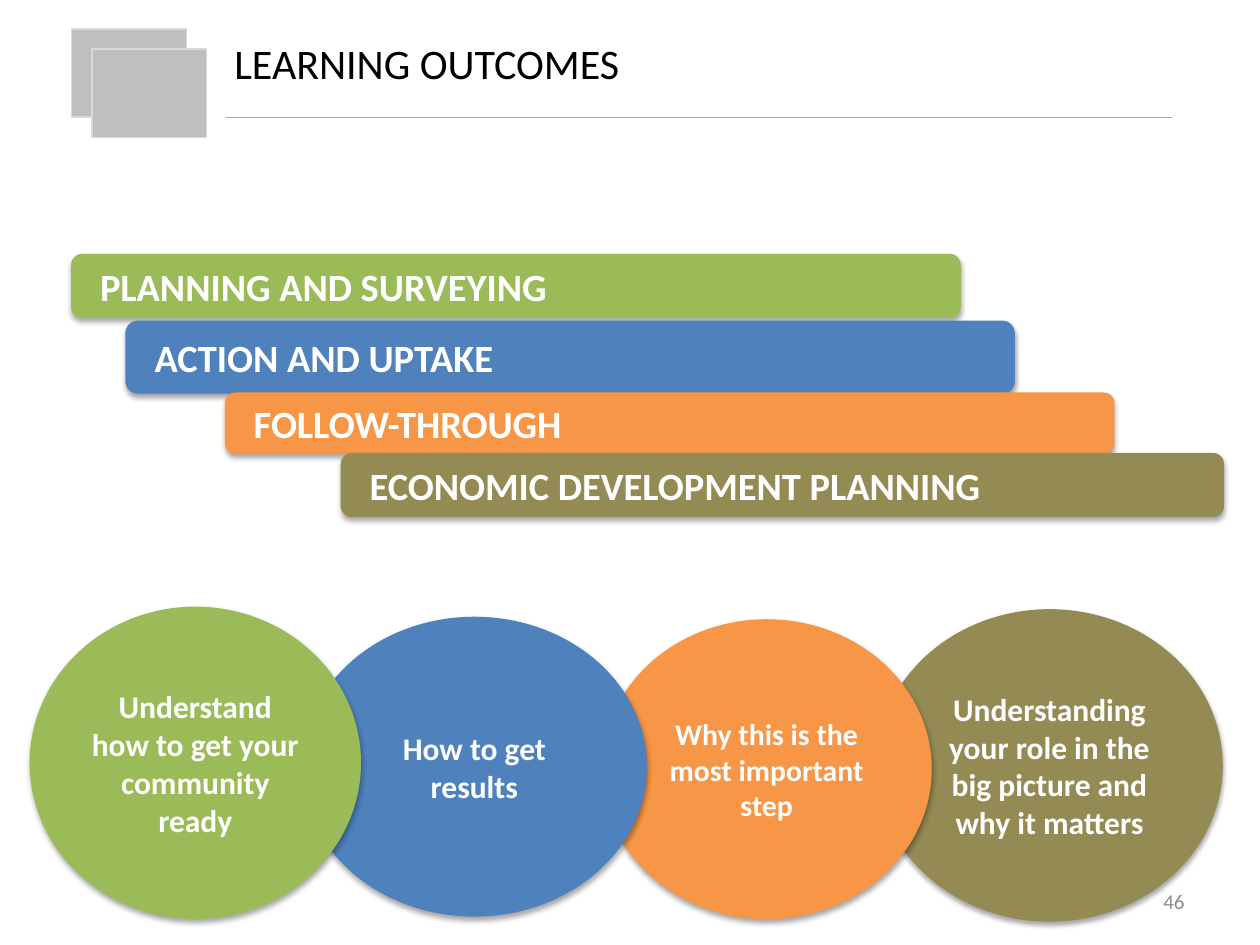
import dataclasses
import typing

import lxml.etree
import pptx
import pptx.dml.color
import pptx.enum.shapes
import pptx.enum.text
import pptx.oxml.ns
import pptx.util

Inches = pptx.util.Inches
Pt = pptx.util.Pt
Align = pptx.enum.text.PP_ALIGN
Kind = pptx.enum.shapes.MSO_SHAPE
qn = pptx.oxml.ns.qn

GREEN, BLUE, ORANGE, OLIVE = "9BBB59", "4F81BD", "F79646", "948A54"


@dataclasses.dataclass
class Item:
    text: str
    left: float
    top: float
    width: float
    height: float
    fill: str
    size: int


BARS = [
    Item("PLANNING AND SURVEYING", 0.57, 2.02, 7.05, 0.5, GREEN, 22),
    Item("ACTION AND UPTAKE", 1, 2.55, 7.05, 0.57, BLUE, 22),
    Item("FOLLOW-THROUGH", 1.79, 3.12, 7.05, 0.48, ORANGE, 22),
    Item("ECONOMIC DEVELOPMENT PLANNING", 2.71, 3.6, 7, 0.5, OLIVE, 22),
]
OVALS = [
    Item("Understanding your role in the big picture and why it matters",
         6.96, 4.84, 2.74, 2.47, OLIVE, 18),
    Item("Why this is the most important step", 4.78, 4.92, 2.61, 2.37, ORANGE, 17),
    Item("How to get results", 2.4, 4.9, 2.73, 2.37, BLUE, 18),
    Item("Understand how to get your community ready",
         0.24, 4.82, 2.62, 2.47, GREEN, 18),
]
TILES = [(0.57, 0.23), (0.73, 0.39)]


def color(code: str) -> pptx.dml.color.RGBColor:
    return pptx.dml.color.RGBColor.from_string(code)


def shade(props: typing.Any, dist: float, alpha: int) -> None:
    for old in props.findall(qn("a:effectLst")):
        props.remove(old)
    group = lxml.etree.SubElement(props, qn("a:effectLst"))
    drop = lxml.etree.SubElement(
        group, qn("a:outerShdw"), blurRad=str(Pt(3.1)), dist=str(Pt(dist)),
        dir="5400000", rotWithShape="0")
    tint = lxml.etree.SubElement(drop, qn("a:srgbClr"), val="000000")
    lxml.etree.SubElement(tint, qn("a:alpha"), val=str(alpha * 1000))


def write(frame: typing.Any, text: str, size: int, code: str,
          align: Align, bold: bool = False) -> None:
    frame.word_wrap = True
    frame.vertical_anchor = pptx.enum.text.MSO_ANCHOR.MIDDLE
    para = frame.paragraphs[0]
    para.alignment = align
    run = para.add_run()
    run.text = text
    run.font.name = "Calibri"
    run.font.size = Pt(size)
    run.font.bold = bold
    run.font.color.rgb = color(code)


def block(slide: typing.Any, kind: Kind, left: float, top: float,
          width: float, height: float, fill: str, edge: str) -> typing.Any:
    shape = slide.shapes.add_shape(
        kind, Inches(left), Inches(top), Inches(width), Inches(height))
    shape.fill.solid()
    shape.fill.fore_color.rgb = color(fill)
    shape.line.color.rgb = color(edge)
    shape.line.width = Pt(0.75)
    shape.shadow.inherit = False
    return shape


def draw(slide: typing.Any, kind: Kind, item: Item, align: Align) -> typing.Any:
    shape = block(slide, kind, item.left, item.top, item.width, item.height,
                  item.fill, item.fill)
    shade(shape._element.spPr, 1.8, 35)
    write(shape.text_frame, item.text, item.size, "FFFFFF", align, True)
    return shape


def main() -> None:
    deck = pptx.Presentation()
    deck.slide_width, deck.slide_height = Inches(10), Inches(7.5)
    slide = deck.slides.add_slide(deck.slide_layouts[5])

    for oval in OVALS:
        draw(slide, Kind.OVAL, oval, Align.CENTER)
    for bar in BARS:
        shape = draw(slide, Kind.ROUNDED_RECTANGLE, bar, Align.LEFT)
        shape.text_frame.margin_left = Inches(0.2)

    page = slide.shapes.add_textbox(
        Inches(7.17), Inches(6.95), Inches(2.33), Inches(0.4))
    write(page.text_frame, "46", 12, "8C8C8C", Align.RIGHT)

    for left, top in TILES:
        block(slide, Kind.RECTANGLE, left, top, 0.91, 0.7, "BFBFBF", "D9D9D9")

    title = slide.shapes.title
    title.left, title.top = Inches(0.26), Inches(0.06)
    title.width, title.height = Inches(9.5), Inches(0.87)
    title.text_frame.margin_left = Inches(1.6)
    write(title.text_frame, "LEARNING OUTCOMES", 24, "000000", Align.LEFT)

    rule = slide.shapes.add_connector(
        pptx.enum.shapes.MSO_CONNECTOR.STRAIGHT,
        Inches(1.79), Inches(0.93), Inches(9.3), Inches(0.93))
    rule.line.color.rgb = color("A6A6A6")
    rule.line.width = Pt(0.25)
    shade(rule._element.spPr, 1.6, 38)

    deck.save("out.pptx")


if __name__ == "__main__":
    main()
